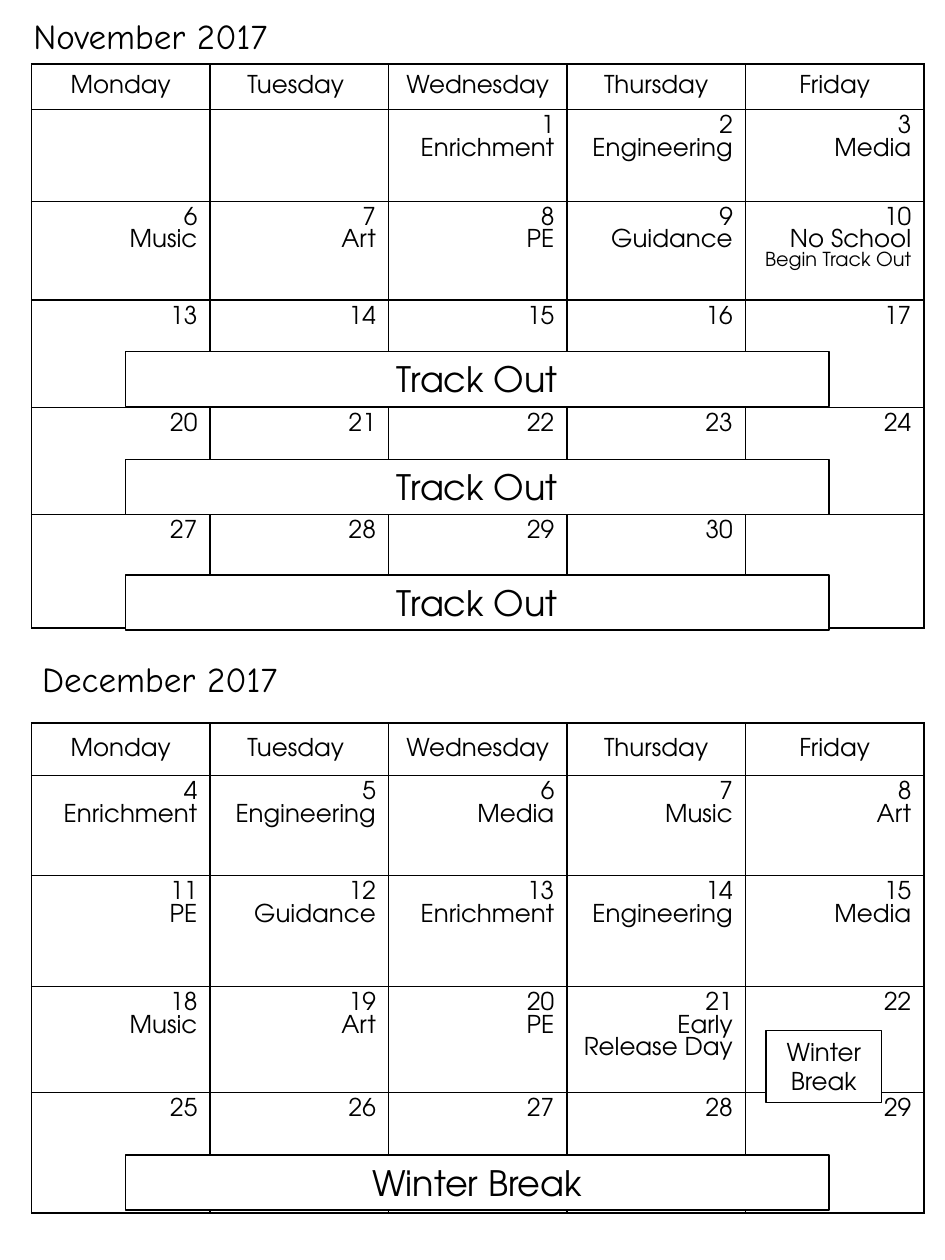
from lxml import etree
from pptx import Presentation
from pptx.dml.color import RGBColor
from pptx.enum.shapes import MSO_SHAPE
from pptx.enum.text import MSO_ANCHOR, PP_ALIGN
from pptx.oxml.ns import qn
from pptx.util import Pt

RECT = MSO_SHAPE.RECTANGLE
TOP, MIDDLE = MSO_ANCHOR.TOP, MSO_ANCHOR.MIDDLE
LEFT, CENTER, RIGHT = PP_ALIGN.LEFT, PP_ALIGN.CENTER, PP_ALIGN.RIGHT

COLORS = {"ink": "000000", "paper": "FFFFFF"}
BODY, HAND = "TeX Gyre Adventor", "Comic Neue"
WEEK = ["Monday", "Tuesday ", "Wednesday", "Thursday", "Friday"]
SMALL = "Begin Track Out"
GRID_X, COL_W = 18, 102

NOV_NOTES = {1: "Enrichment", 2: "Engineering", 3: "Media", 6: "Music",
             7: "Art", 8: "PE", 9: "Guidance", 10: "No School\n" + SMALL}
DEC_NOTES = {4: "Enrichment", 5: "Engineering", 6: "Media", 7: "Music",
             8: "Art", 11: "PE", 12: "Guidance", 13: "Enrichment",
             14: "Engineering", 15: "Media", 18: "Music", 19: "Art",
             20: "PE", 21: "Early Release Day"}


def color(name):
    return RGBColor.from_string(COLORS[name])


def set_text(frame, text, size, font, align, spacing=None):
    frame.text = text
    for par in frame.paragraphs:
        par.alignment = align
        if spacing:
            par.line_spacing = spacing
        par.font.size = Pt(size)
        for run in par.runs:
            run.font.size = Pt(11 if run.text == SMALL else size)
            run.font.name = font
            run.font.color.rgb = color("ink")


def add_border(cell):
    props = cell._tc.get_or_add_tcPr()
    for spot, side in enumerate(("lnL", "lnR", "lnT", "lnB")):
        line = etree.Element(qn("a:" + side), w=str(Pt(1)))
        fill = etree.SubElement(line, qn("a:solidFill"))
        etree.SubElement(fill, qn("a:srgbClr"), val=COLORS["ink"])
        props.insert(spot, line)


def fill_cell(cell, text, align, anchor):
    cell.fill.background()
    add_border(cell)
    cell.vertical_anchor = anchor
    set_text(cell.text_frame, text, 14, BODY, align, 0.99)


def add_title(slide, text, x, y):
    box = slide.shapes.add_textbox(Pt(x), Pt(y), Pt(180), Pt(31.5))
    box.text_frame.word_wrap = True
    set_text(box.text_frame, text, 20, HAND, LEFT)


def add_month(slide, top, heights, monday, last, notes):
    """Draw a grid whose first week starts on day `monday` (may be below 1)."""
    frame = slide.shapes.add_table(len(heights), len(WEEK), Pt(GRID_X), Pt(top),
                                   Pt(COL_W * len(WEEK)), Pt(sum(heights)))
    table = frame.table
    table.first_row = table.horz_banding = False
    for col in table.columns:
        col.width = Pt(COL_W)
    for row, height in zip(table.rows, heights):
        row.height = Pt(height)

    # Weekday names
    for c, name in enumerate(WEEK):
        fill_cell(table.cell(0, c), name, CENTER, MIDDLE)

    # Dates and what falls on them
    for r in range(1, len(heights)):
        for c in range(len(WEEK)):
            day = monday + 7 * (r - 1) + c
            text = str(day) if 1 <= day <= last else ""
            if day in notes:
                text += "\n" + notes[day]
            fill_cell(table.cell(r, c), text, RIGHT, TOP)


def add_banner(slide, text, y, x=71.75, width=402, height=31.5, size=20):
    box = slide.shapes.add_shape(RECT, Pt(x), Pt(y), Pt(width), Pt(height))
    box.shadow.inherit = False
    box.fill.solid()
    box.fill.fore_color.rgb = color("paper")
    box.line.color.rgb = color("ink")
    box.line.width = Pt(0.75)
    box.text_frame.word_wrap = True
    box.text_frame.vertical_anchor = TOP
    set_text(box.text_frame, text, size, BODY, CENTER)


def main():
    prs = Presentation()
    prs.slide_width, prs.slide_height = Pt(540), Pt(720)
    slide = prs.slides.add_slide(prs.slide_layouts[6])

    # November
    add_month(slide, 36.5, [26, 52.5, 56.5, 61.25, 61.25, 65], -1, 30, NOV_NOTES)
    add_title(slide, "November 2017", 12, 4.5)

    # December
    add_month(slide, 413.25, [30, 57, 63.5, 60.5, 69], 4, 31, DEC_NOTES)
    add_title(slide, "December 2017", 17, 372)

    # Breaks laid over the weeks
    for y in (200.75, 262.5, 328.5):
        add_banner(slide, "Track Out", y)
    add_banner(slide, "Winter Break", 660)
    add_banner(slide, "Winter Break", 589, 437.75, 66, 41, 14)

    prs.save("out.pptx")


if __name__ == "__main__":
    main()
